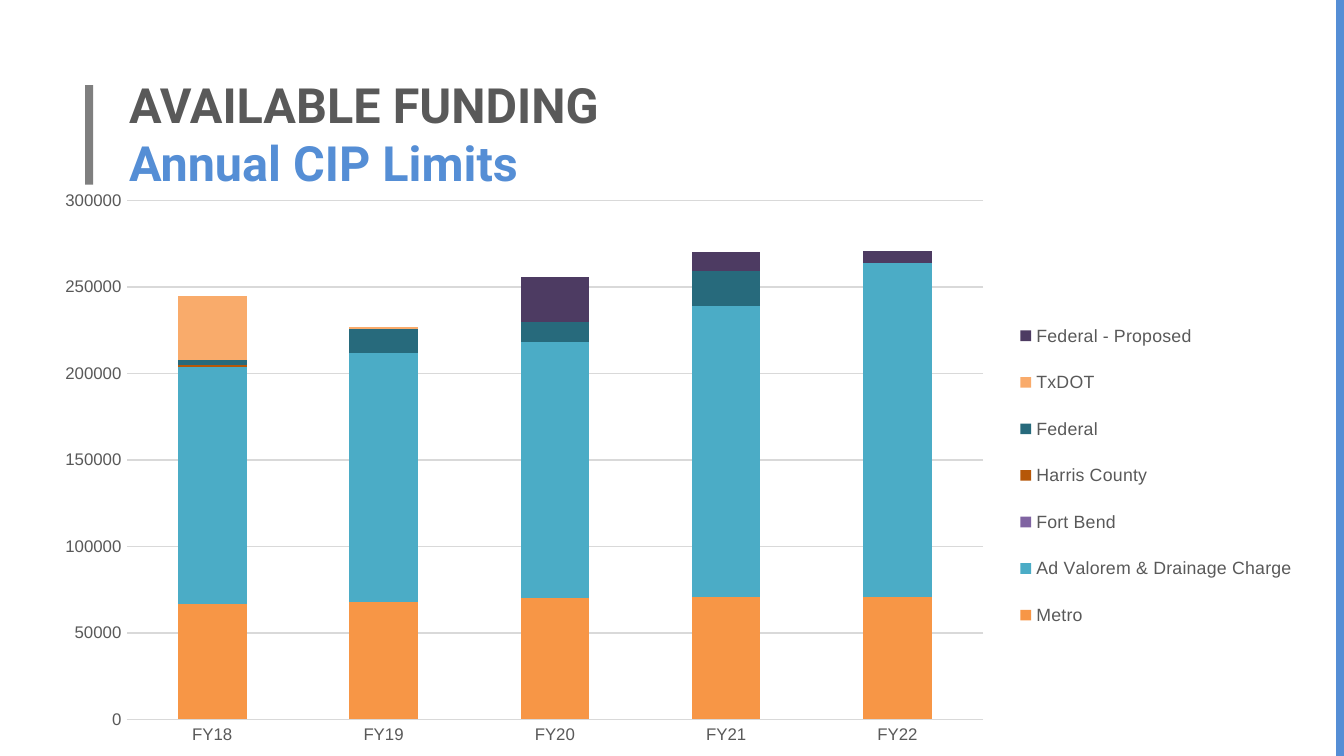
from typing import NamedTuple, Optional

from lxml import etree
from pptx import Presentation
from pptx import util as u
from pptx.chart.data import CategoryChartData
from pptx.dml.color import RGBColor
from pptx.enum import chart as ch, shapes, text
from pptx.oxml import ns

Cm, Pt = u.Cm, u.Pt
GREY, BLUE, RULE = "595959", "558ED5", "D9D9D9"
YEARS = ["FY18", "FY19", "FY20", "FY21", "FY22"]


class Bar(NamedTuple):
    left: float
    top: float
    width: float
    height: float
    fill: str


class Fund(NamedTuple):
    name: str
    fill: str
    vals: list[Optional[int]]


class Area(NamedTuple):
    """A part of the chart, in percent of its size."""
    x: float
    y: float
    w: float
    h: float


BARS = [
    Bar(1.61, 1.61, 0.15, 1.88, "7F7F7F"),
    Bar(25.25, 0, 0.15, 14.29, BLUE),
]
FUNDS = [
    Fund("Metro", "F79646", [67000, 68000, 70000, 71000, 71000]),
    Fund("Ad Valorem & Drainage Charge", "4BACC6",
         [137000, 144000, 148000, 168000, 193000]),
    Fund("Fort Bend", "8064A2", [None, None, 0, None, None]),
    Fund("Harris County", "B65708", [1000, None, None, None, None]),
    Fund("Federal", "276A7C", [3000, 14000, 12000, 20000, None]),
    Fund("TxDOT", "F9AB6B", [37000, 1000, None, None, None]),
    Fund("Federal - Proposed", "4D3B62", [None, None, 26000, 11000, 7000]),
]
PLOT = Area(7.2, 3.6, 65.3, 90)
LEGEND = Area(74.7, 20.8, 22, 61)


def paint(part, tone: str) -> None:
    """Give a fill or line format one solid colour."""
    fill = part if hasattr(part, "solid") else part.fill
    fill.solid()
    fill.fore_color.rgb = RGBColor.from_string(tone)


def style(font, face: str, size: float, tone: str, bold: bool = False) -> None:
    font.name, font.size, font.bold = face, Pt(size), bold
    paint(font.fill, tone)


def add_bar(slide, bar: Bar) -> None:
    shape = slide.shapes.add_shape(
        shapes.MSO_SHAPE.RECTANGLE,
        Cm(bar.left), Cm(bar.top), Cm(bar.width), Cm(bar.height))
    shape.shadow.inherit = False
    paint(shape.fill, bar.fill)
    shape.line.fill.background()


def add_title(slide) -> None:
    box = slide.shapes.add_textbox(Cm(2.19), Cm(1.17), Cm(11), Cm(2.39))
    frame = box.text_frame
    frame.word_wrap = True
    frame.vertical_anchor = text.MSO_ANCHOR.TOP
    frame.margin_left = frame.margin_right = Cm(0.25)
    frame.margin_top = frame.margin_bottom = Cm(0.25)
    para = frame.paragraphs[0]
    run = para.add_run()
    run.text = "AVAILABLE FUNDING"
    style(run.font, "Roboto", 26, GREY, True)
    para.add_line_break()
    run = para.add_run()
    run.text = "Annual CIP Limits"
    style(run.font, "Roboto", 26, BLUE, True)


def place(part, area: Area, inner: bool = False) -> None:
    """Fix where a plot area or legend sits in the chart."""
    layout = part.find(ns.qn("c:layout"))
    if layout is None:
        layout = etree.Element(ns.qn("c:layout"))
        pos = part.find(ns.qn("c:legendPos"))
        if pos is None:
            part.insert(0, layout)
        else:
            pos.addnext(layout)
    for old in list(layout):
        layout.remove(old)
    manual = etree.SubElement(layout, ns.qn("c:manualLayout"))
    rules = {"layoutTarget": "inner"} if inner else {}
    rules |= {"xMode": "edge", "yMode": "edge"}
    rules |= {key: val / 100 for key, val in area._asdict().items()}
    for tag, val in rules.items():
        etree.SubElement(manual, ns.qn(f"c:{tag}")).set("val", str(val))


def add_chart(slide) -> None:
    data = CategoryChartData()
    data.categories = YEARS
    for fund in FUNDS:
        data.add_series(fund.name, fund.vals)
    chart = slide.shapes.add_chart(
        ch.XL_CHART_TYPE.COLUMN_STACKED,
        Cm(0.61), Cm(3.4), Cm(24.79), Cm(10.9), data).chart
    style(chart.font, "Arial", 10, "000000")
    chart.has_title = False
    plot = chart.plots[0]
    plot.gap_width, plot.overlap = 150, 100
    plot.vary_by_categories = False
    for series, fund in zip(plot.series, FUNDS):
        paint(series.format.fill, fund.fill)

    cat, val = chart.category_axis, chart.value_axis
    for axis in (cat, val):
        axis.major_tick_mark = axis.minor_tick_mark = ch.XL_TICK_MARK.NONE
        style(axis.tick_labels.font, "Arial", 9, GREY)
    val.minimum_scale, val.maximum_scale, val.major_unit = 0, 300000, 50000
    val.has_major_gridlines = True
    val.format.line.fill.background()
    for line in (cat.format.line, val.major_gridlines.format.line):
        paint(line, RULE)
        line.width = Pt(0.75)

    chart.has_legend = True
    chart.legend.position = ch.XL_LEGEND_POSITION.RIGHT
    chart.legend.include_in_layout = False
    style(chart.legend.font, "Arial", 9.5, GREY)
    root = chart._chartSpace.chart
    place(root.plotArea, PLOT, inner=True)
    place(root.find(ns.qn("c:legend")), LEGEND)


def main() -> None:
    deck = Presentation()
    deck.slide_width, deck.slide_height = Cm(25.4), Cm(14.29)
    slide = deck.slides.add_slide(deck.slide_layouts[6])
    for bar in BARS:
        add_bar(slide, bar)
    add_title(slide)
    add_chart(slide)
    deck.save("out.pptx")


if __name__ == "__main__":
    main()
